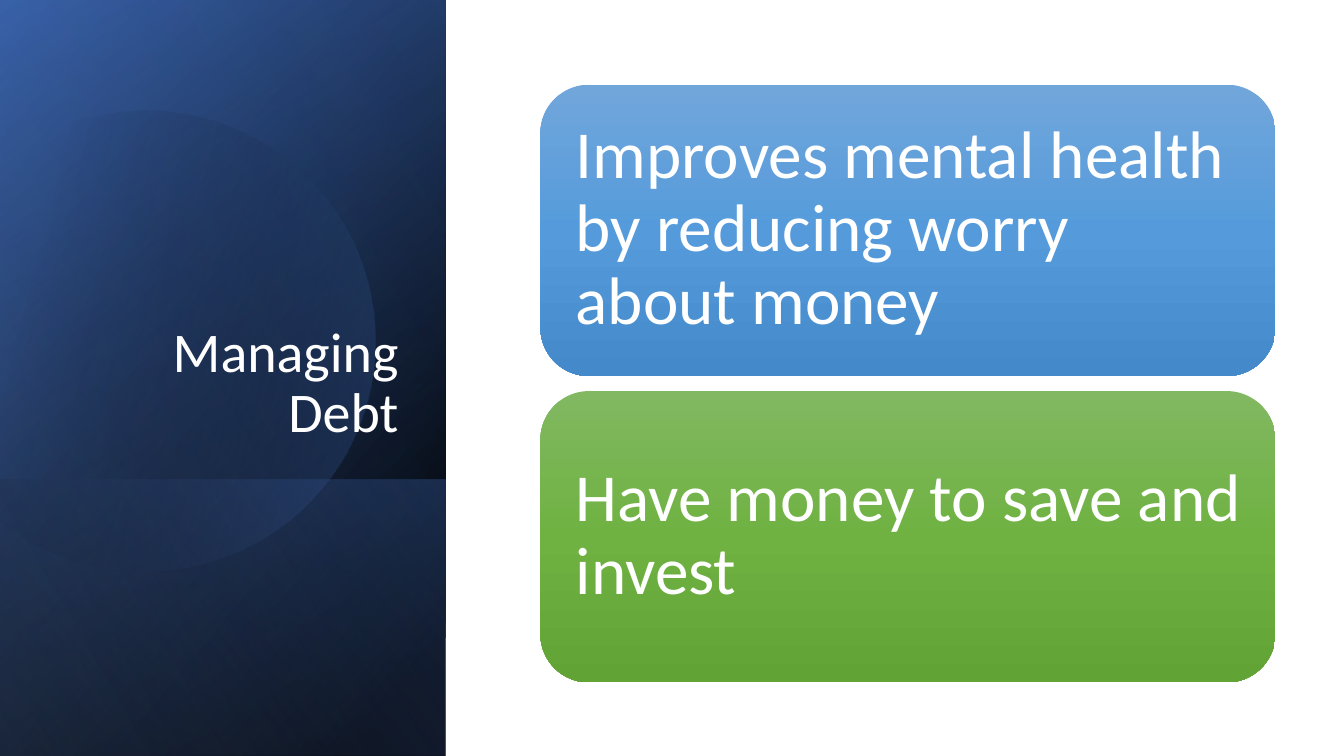
import math

import pptx
import pptx.dml.color
import pptx.enum.shapes
import pptx.enum.text
import pptx.oxml
import pptx.oxml.ns
import pptx.util

Inches = pptx.util.Inches
RGBColor = pptx.dml.color.RGBColor
Shapes = pptx.enum.shapes.MSO_SHAPE
Anchor = pptx.enum.text.MSO_ANCHOR
Align = pptx.enum.text.PP_ALIGN

WHITE = RGBColor(0xFF, 0xFF, 0xFF)
BLACK = RGBColor(0x00, 0x00, 0x00)
NAVY = RGBColor(0x2F, 0x55, 0x97)
BLUE = RGBColor(0x44, 0x72, 0xC4)
PALE_BLUE = RGBColor(0x8F, 0xAA, 0xDC)
CARD_BLUES = [RGBColor(0x71, 0xA6, 0xDB), RGBColor(0x55, 0x9B, 0xDB), RGBColor(0x44, 0x8A, 0xCA)]
CARD_GREENS = [RGBColor(0x81, 0xB8, 0x61), RGBColor(0x6F, 0xB2, 0x42), RGBColor(0x62, 0xA3, 0x36)]

# Each panel layer: left, top, width, height; gradient stops (position %, colour, opacity %); angle
FULL_PANEL = (-1.54, 1.54, 7.5, 4.42)
BACK_LAYERS = [
    (FULL_PANEL, [(8, BLACK, 100), (100, NAVY, 100)], 50),
    (FULL_PANEL, [(0, BLACK, 0), (99, BLUE, 46)], 30),
    ((0.84, 3.92, 2.74, 4.42), [(2, BLUE, 29), (100, BLACK, 30)], 130),
]
FRONT_LAYER = (FULL_PANEL, [(0, BLACK, 0), (99, PALE_BLUE, 11)], 120)

# Circle cut off at the left: curves as they stand on the slide, in inches
CIRCLE_START = (1.49, 1.1)
CIRCLE_RIGHT = [
    [(2.46, 1.12), (3.35, 1.77), (3.63, 2.75)],
    [(3.98, 3.97), (3.28, 5.23), (2.07, 5.58)],
    [(1.31, 5.8), (0.53, 5.61), (-0.03, 5.14)],
]
CIRCLE_CUT = [(-0.15, 5.03), (-0.15, 1.75), (0, 1.61)]
CIRCLE_TOP = [
    [(0.23, 1.42), (0.5, 1.28), (0.8, 1.19)],
    [(1.03, 1.13), (1.26, 1.1), (1.49, 1.1)],
]
CIRCLE_CENTRE = (1.585, 3.345)
CIRCLE_TILT = 16.1

CARDS = [
    ("Improves mental health by reducing worry about money", CARD_BLUES),
    ("Have money to save and invest", CARD_GREENS),
]
CARD_TOP, CARD_PITCH = 0.84, 3.04


def paint_gradient(shape, stops, angle):
    """Fill with (position %, colour, opacity %) stops, without line or shadow."""
    shape.shadow.inherit = False
    shape.line.fill.background()
    shape.fill.gradient()
    stop_xml = "".join(
        f'<a:gs pos="{position * 1000}"><a:srgbClr val="{colour}">'
        f'<a:alpha val="{opacity * 1000}"/></a:srgbClr></a:gs>'
        for position, colour, opacity in stops
    )
    gradient = pptx.oxml.parse_xml(
        f'<a:gradFill {pptx.oxml.ns.nsdecls("a")} rotWithShape="1"><a:gsLst>{stop_xml}</a:gsLst>'
        f'<a:lin ang="{angle * 60000}" scaled="0"/></a:gradFill>'
    )
    properties = shape._element.spPr
    properties.replace(properties.find(pptx.oxml.ns.qn("a:gradFill")), gradient)


def add_panel_layer(page, place, stops, angle):
    layer = page.shapes.add_shape(Shapes.RECTANGLE, *map(Inches, place))
    layer.rotation = 90
    layer._element.spPr.xfrm.set("flipH", "1")
    paint_gradient(layer, stops, angle)


def curve_points(start, curves, steps=24):
    """Sample joined cubic curves, leaving out the start point."""
    points = []
    for first, second, end in curves:
        for step in range(1, steps + 1):
            t = step / steps
            weights = ((1 - t) ** 3, 3 * t * (1 - t) ** 2, 3 * t * t * (1 - t), t ** 3)
            corners = (start, first, second, end)
            points.append(tuple(
                sum(weight * corner[axis] for weight, corner in zip(weights, corners))
                for axis in (0, 1)
            ))
        start = end
    return points


def turn(point):
    """Turn a point about the circle's centre, so that the tilted shape lands in place."""
    angle = math.radians(CIRCLE_TILT)
    x, y = point[0] - CIRCLE_CENTRE[0], point[1] - CIRCLE_CENTRE[1]
    return (
        Inches(CIRCLE_CENTRE[0] + x * math.cos(angle) - y * math.sin(angle)),
        Inches(CIRCLE_CENTRE[1] + x * math.sin(angle) + y * math.cos(angle)),
    )


def add_cut_circle(page):
    outline = [CIRCLE_START] + curve_points(CIRCLE_START, CIRCLE_RIGHT)
    outline += CIRCLE_CUT + curve_points(CIRCLE_CUT[-1], CIRCLE_TOP)
    points = [turn(point) for point in outline]
    builder = page.shapes.build_freeform(*points[0])
    builder.add_line_segments(points[1:], close=True)
    circle = builder.convert_to_shape()
    circle.rotation = 360 - CIRCLE_TILT
    paint_gradient(circle, [(29, BLACK, 0), (100, BLUE, 43)], 30)


def add_text(page, place, text, size, frame_format, align):
    box = page.shapes.add_textbox(*map(Inches, place))
    frame = box.text_frame
    for name, value in {"word_wrap": True, **frame_format}.items():
        setattr(frame, name, value)
    para = frame.paragraphs[0]
    para.alignment = align
    para.line_spacing = 0.9
    span = para.add_run()
    span.text = text
    span.font.color.rgb = WHITE
    for name, value in {"name": "Calibri", "size": pptx.util.Pt(size)}.items():
        setattr(span.font, name, value)


def add_card(page, top, text, colours):
    card = page.shapes.add_shape(
        Shapes.ROUNDED_RECTANGLE, Inches(5.36), Inches(top), Inches(7.29), Inches(2.89))
    paint_gradient(card, [(50 * i, colour, 100) for i, colour in enumerate(colours)], 90)
    sides = ("left", "top", "right", "bottom")
    frame_format = {f"margin_{side}": Inches(0.2) for side in sides}
    frame_format["vertical_anchor"] = Anchor.MIDDLE
    add_text(page, (5.51, top + 0.14, 7.01, 2.6), text, 48, frame_format, Align.LEFT)


def main():
    deck = pptx.Presentation()
    deck.slide_width, deck.slide_height = Inches(13.33), Inches(7.5)
    page = deck.slides.add_slide(deck.slide_layouts[6])
    for layer in BACK_LAYERS:
        add_panel_layer(page, *layer)
    add_cut_circle(page)
    add_panel_layer(page, *FRONT_LAYER)
    add_text(page, (0.64, 1.84, 3.41, 2.62), "Managing Debt", 40,
             {"vertical_anchor": Anchor.BOTTOM}, Align.RIGHT)
    for row, (text, colours) in enumerate(CARDS):
        add_card(page, CARD_TOP + row * CARD_PITCH, text, colours)
    deck.save("out.pptx")


if __name__ == "__main__":
    main()
